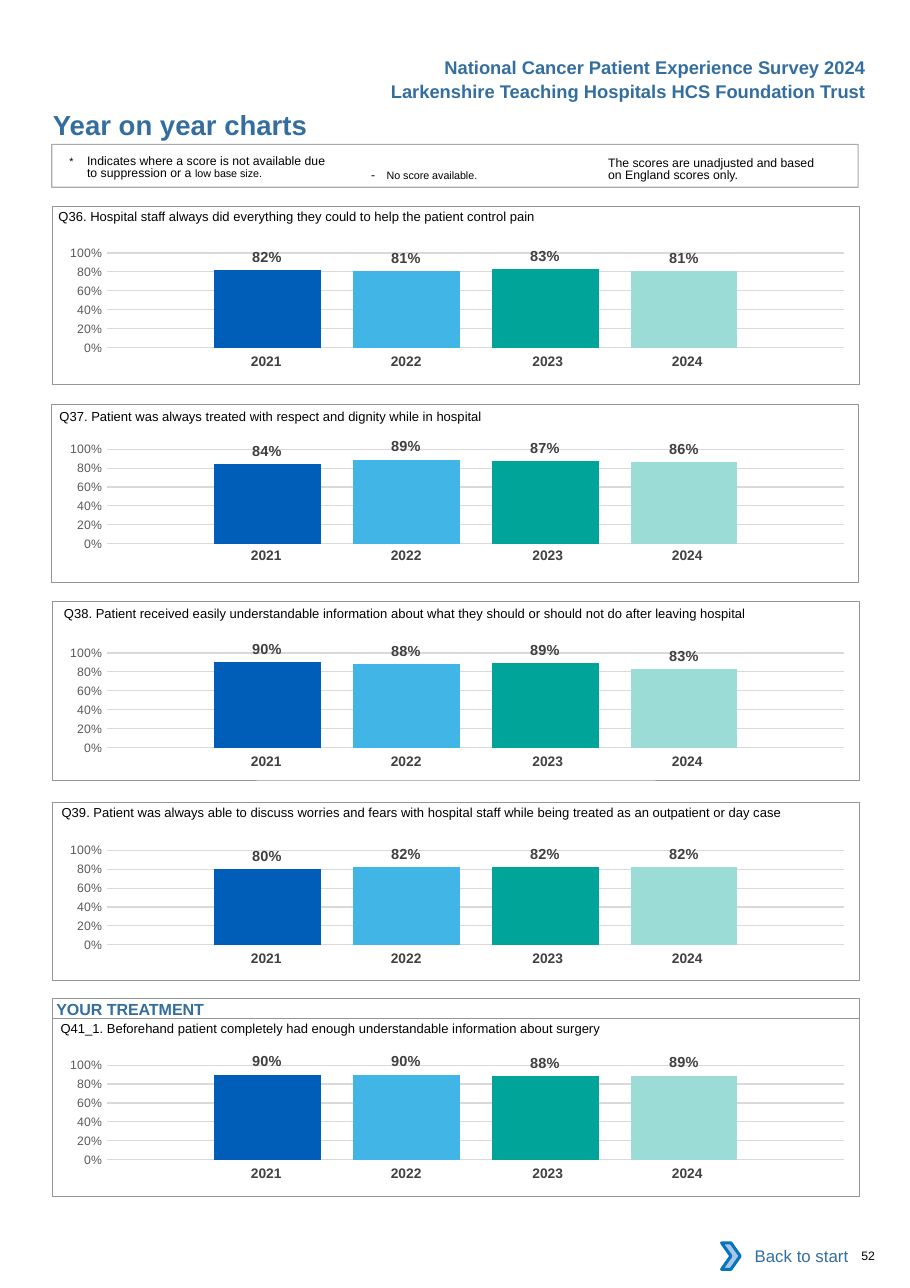
from lxml.etree import SubElement
from pptx import Presentation
from pptx.chart.data import CategoryChartData
from pptx.dml.color import RGBColor
from pptx.enum.chart import XL_CHART_TYPE as ChartType, XL_LABEL_POSITION as LabelPos, XL_TICK_MARK as TickMark
from pptx.enum.shapes import MSO_SHAPE as Preset
from pptx.enum.text import MSO_ANCHOR as Anchor, PP_ALIGN as Align
from pptx.oxml import parse_xml
from pptx.oxml.ns import nsdecls, qn
from pptx.util import Pt

HEADERS = [
    ("National Cancer Patient Experience Survey 2024", 36.7),
    ("Larkenshire Teaching Hospitals HCS Foundation Trust", 52.6),
]
TITLE = "Year on year charts"
SUPPRESSED = [("*\t", 7), ("Indicates where a score is not available due to suppression or a ", 8),
              ("low base size.", 7)]
NO_SCORE = [("- ", 8), ("No score available.", 7)]
UNADJUSTED = [("The scores are unadjusted and based on England scores only.", 8)]
SECTION = "YOUR TREATMENT"
BACK = "Back to start"
PAGE = "52"

YEARS = [
    ("2021", "005EB8", 91.5, 0),
    ("2022", "41B6E6", 91.5, 0),
    ("2023", "00A499", 96.5, 2.9),
    ("2024", "9CDCD7", 91.5, 8.6),
]
QUESTIONS = [
    ("Q36. Hospital staff always did everything they could to help the patient control pain",
     [0.82, 0.81, 0.83, 0.81], (38.2, 136.5), (34.56, 134.64), 151.9, 227.5),
    ("Q37. Patient was always treated with respect and dignity while in hospital",
     [0.84, 0.89, 0.87, 0.86], (38.9, 267.2), (33.84, 264.24), 280.1, 354.2),
    ("Q38. Patient received easily understandable information about what they should or should not do "
     "after leaving hospital",
     [0.90, 0.88, 0.89, 0.83], (41.8, 396), (34.56, 393.12), 413.3, 488.9),
    ("Q39. Patient was always able to discuss worries and fears with hospital staff while being treated "
     "as an outpatient or day case",
     [0.80, 0.82, 0.82, 0.82], (40.3, 526), (34.56, 524.16), 542.2, 617.8),
    ("Q41_1. Beforehand patient completely had enough understandable information about surgery",
     [0.90, 0.90, 0.88, 0.89], (39.6, 667), (34.56, 665.28), 682.6, 758.2),
]
BLUE, BLACK, GREY = "336E9F", "000000", "939598"
FRAME_W, FRAME_H = 527, 116.64
CHART_X, CHART_H = 28.1, 92.9
PLOT_AREA = {"x": 0.079, "y": 0.145, "w": 0.915, "h": 0.666}
NO_GRID_STYLE = "{2D5ABB26-0587-4C30-8999-92F81FD0307C}"


def rgb(value):
    return RGBColor.from_string(value)


def style(font, size, color, bold=False):
    font.name, font.size, font.bold = "Arial", Pt(size), bold
    font.color.rgb = rgb(color)


def write(frame, runs, color=BLACK, bold=False, align=Align.LEFT, margins=(0, 0, 0, 0), wrap=True):
    frame.word_wrap = wrap
    frame.margin_left, frame.margin_top, frame.margin_right, frame.margin_bottom = map(Pt, margins)
    line = frame.paragraphs[0]
    line.alignment = align
    for words, size in runs:
        run = line.add_run()
        run.text = words
        style(run.font, size, color, bold)
    return line


def label(slide, x, y, w, h, runs, **look):
    return write(slide.shapes.add_textbox(Pt(x), Pt(y), Pt(w), Pt(h)).text_frame, runs, **look)


def block(slide, preset, x, y, w, h, fill=None, line=None, weight=0.5):
    shape = slide.shapes.add_shape(preset, Pt(x), Pt(y), Pt(w), Pt(h))
    shape.shadow.inherit = False
    if fill:
        shape.fill.solid()
        shape.fill.fore_color.rgb = rgb(fill)
    else:
        shape.fill.background()
    if line:
        shape.line.color.rgb = rgb(line)
        shape.line.width = Pt(weight)
    else:
        shape.line.fill.background()
    return shape


def add_years(slide, y):
    width = sum(year[2] for year in YEARS)
    table = slide.shapes.add_table(1, len(YEARS), Pt(124.6), Pt(y), Pt(width), Pt(19.4)).table
    table.first_row = table.horz_banding = False
    table._tbl.tblPr.find(qn("a:tableStyleId")).text = NO_GRID_STYLE
    for column, cell, (year, _, col_w, right) in zip(table.columns, table.rows[0].cells, YEARS):
        column.width = Pt(col_w)
        cell.fill.background()
        cell.margin_left, cell.margin_right = Pt(7.2), Pt(right)
        cell.margin_top = cell.margin_bottom = Pt(3.6)
        cell.text_frame.text = year
        line = cell.text_frame.paragraphs[0]
        line.alignment = Align.CENTER
        style(line.runs[0].font, 9, "414042", True)


def add_scores(slide, y, scores):
    data = CategoryChartData(number_format="0%")
    data.categories = ["1"]
    for (year, *_), score in zip(YEARS, scores):
        data.add_series(year, [score])
    chart = slide.shapes.add_chart(ChartType.COLUMN_CLUSTERED, Pt(CHART_X), Pt(y),
                                   Pt(FRAME_W), Pt(CHART_H), data).chart
    chart.has_legend = chart.has_title = False
    chart.font.name, chart.font.size = "Calibri", Pt(10)
    chart.font.color.rgb = rgb(BLACK)
    chart.category_axis.visible = False
    axis = chart.value_axis
    axis.minimum_scale, axis.maximum_scale, axis.major_unit = 0, 1, 0.2
    axis.major_tick_mark = axis.minor_tick_mark = TickMark.NONE
    axis.format.line.fill.background()
    axis.major_gridlines.format.line.color.rgb = rgb("D9D9D9")
    axis.major_gridlines.format.line.width = Pt(0.75)
    axis.tick_labels.number_format, axis.tick_labels.number_format_is_linked = "0%", False
    style(axis.tick_labels.font, 8, "595959")
    bars = chart.plots[0]
    bars.gap_width, bars.overlap, bars.vary_by_categories = 200, -30, False
    for series, (_, color, *_) in zip(bars.series, YEARS):
        series.format.fill.solid()
        series.format.fill.fore_color.rgb = rgb(color)
        tags = series.data_labels
        tags.show_value, tags.position = True, LabelPos.OUTSIDE_END
        tags.number_format, tags.number_format_is_linked = "0%", False
        style(tags.font, 9.5, "404040", True)
    area = chart._chartSpace.chart.plotArea
    for old in area.findall(qn("c:layout")):
        area.remove(old)
    modes = '<c:layoutTarget val="inner"/><c:xMode val="edge"/><c:yMode val="edge"/>'
    sizes = "".join(f'<c:{side} val="{share}"/>' for side, share in PLOT_AREA.items())
    area.insert(0, parse_xml(f'<c:layout {nsdecls("c")}><c:manualLayout>{modes}{sizes}'
                             '</c:manualLayout></c:layout>'))


def add_legend(slide):
    line = label(slide, 45.4, 99.4, 173, 18, SUPPRESSED, margins=(0, 2.2, 0, 0))
    line.line_spacing = Pt(8.1)
    hang = line._p.get_or_add_pPr()
    hang.set("marL", str(Pt(11.5)))
    hang.set("indent", str(Pt(-11.5)))
    dash = label(slide, 242.6, 109.2, 118, 10, NO_SCORE)
    dash.runs[0].font._element.set("spc", "260")
    label(slide, 397.4, 100.7, 144.7, 18, UNADJUSTED, margins=(0, 2.2, 0, 0)).line_spacing = Pt(8.1)
    frame = block(slide, Preset.RECTANGLE, 33.84, 94.3, FRAME_W, 28.1, line=GREY, weight=0.75)
    tint = frame.line._ln.find(".//" + qn("a:srgbClr"))
    SubElement(tint, qn("a:alpha")).set("val", "80000")


def main():
    deck = Presentation()
    deck.slide_width, deck.slide_height = Pt(594.72), Pt(841.68)
    slide = deck.slides.add_slide(deck.slide_layouts[6])
    for header, y in HEADERS:
        label(slide, 240, y, 325.9, 14.4, [(header, 12)], color=BLUE, bold=True,
              align=Align.RIGHT, wrap=False)
    label(slide, 34.6, 70.8, 324, 21.6, [(TITLE, 18)], color=BLUE, bold=True)
    add_legend(slide)
    section = block(slide, Preset.RECTANGLE, 34.56, 652.3, FRAME_W, 13, line=GREY)
    section.text_frame.vertical_anchor = Anchor.TOP
    write(section.text_frame, [(SECTION, 10.5)], color=BLUE, bold=True, margins=(2.2, 0.7, 0, 0))
    for question, scores, (text_x, text_y), (x, y), chart_y, years_y in QUESTIONS:
        label(slide, text_x, text_y, 515, 10, [(question, 8.5)])
        add_years(slide, years_y)
        add_scores(slide, chart_y, scores)
        block(slide, Preset.RECTANGLE, x, y, FRAME_W, FRAME_H, line=GREY)
    back = block(slide, Preset.RECTANGLE, 476.6, 805.7, 85, 30.2, fill="FFFFFF")
    back.text_frame.vertical_anchor = Anchor.MIDDLE
    write(back.text_frame, [(BACK, 11)], color=BLUE, align=Align.RIGHT, margins=(0, 3.6, 7.2, 3.6))
    block(slide, Preset.CHEVRON, 471.6, 812.2, 12.2, 17.3, fill="A8C7E9", line="0A74BB", weight=2)
    label(slide, 563, 815.8, 30, 9.4, [(PAGE, 8)])
    deck.save("out.pptx")


if __name__ == "__main__":
    main()
